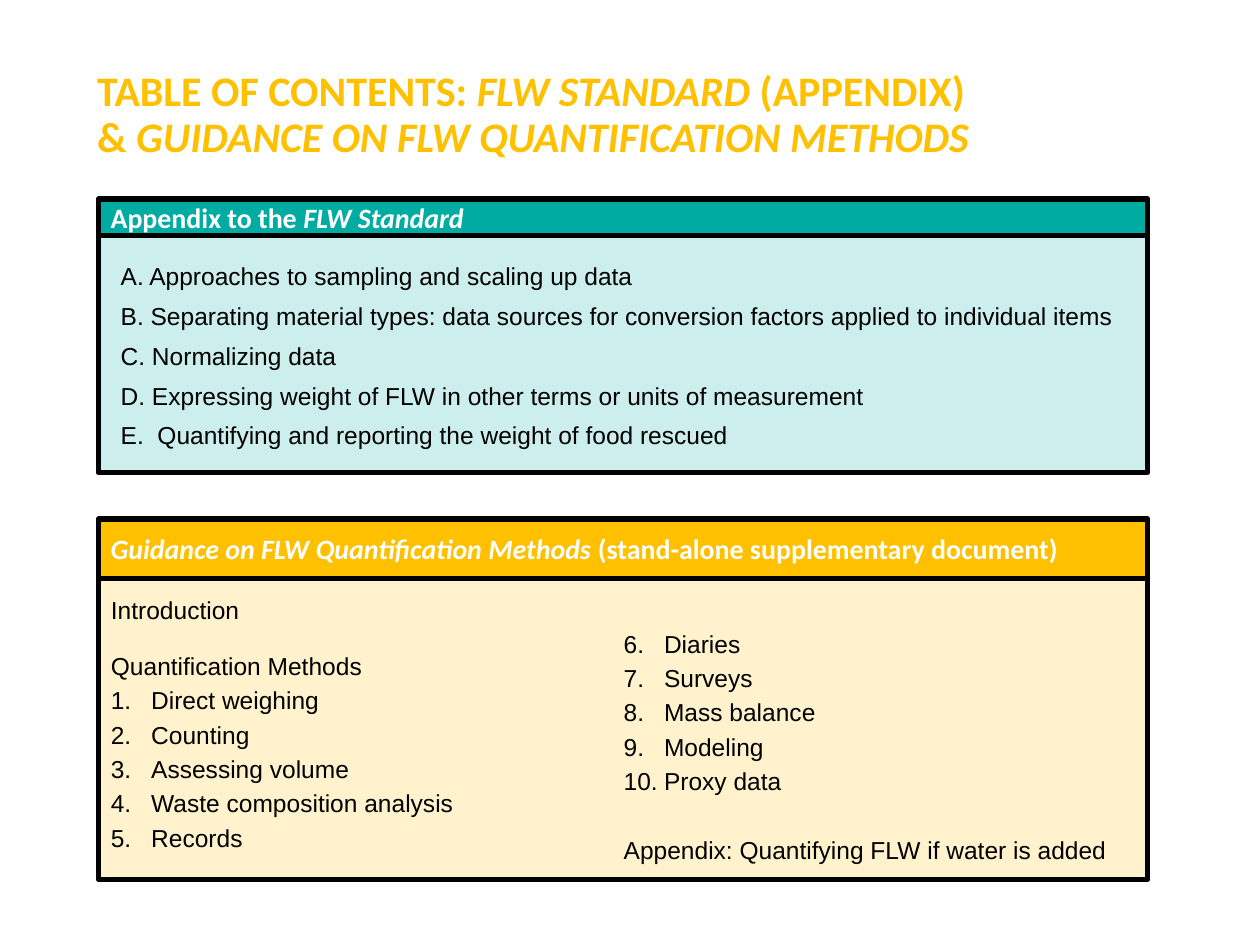
import pptx
import pptx.util
import pptx.dml.color
import pptx.enum.shapes
import pptx.enum.text
import pptx.oxml
import pptx.oxml.ns
import lxml.etree

Inches = pptx.util.Inches
Pt = pptx.util.Pt
COLORS = {"gold": "FFC000", "teal": "00ACA2", "black": "000000", "white": "FFFFFF"}
PANEL_LEFT, PANEL_WIDTH = 0.78, 8.33


def add_span(para, text, size, font, color, bold=False, italic=False):
    span = para.add_run()
    span.text = text
    span.font.size = Pt(size)
    span.font.name = font
    span.font.bold = bold
    span.font.italic = italic
    span.font.color.rgb = pptx.dml.color.RGBColor.from_string(COLORS[color])


def add_panel(top, height, color, alpha=None):
    panel = page.shapes.add_shape(
        pptx.enum.shapes.MSO_SHAPE.RECTANGLE,
        Inches(PANEL_LEFT), Inches(top), Inches(PANEL_WIDTH), Inches(height))
    panel.shadow.inherit = False
    panel.fill.solid()
    panel.fill.fore_color.rgb = pptx.dml.color.RGBColor.from_string(COLORS[color])
    panel.line.color.rgb = pptx.dml.color.RGBColor.from_string(COLORS["black"])
    panel.line.width = Pt(3)
    if alpha:
        fill_color = panel._element.spPr.find(".//" + pptx.oxml.ns.qn("a:srgbClr"))
        lxml.etree.SubElement(fill_color, pptx.oxml.ns.qn("a:alpha"), val=str(alpha * 1000))
    return panel


deck = pptx.Presentation()
deck.slide_width, deck.slide_height = Inches(10), Inches(7.5)
page = deck.slides.add_slide(deck.slide_layouts[3])

title = page.shapes.title
title.left, title.top, title.width, title.height = Inches(0.67), Inches(0.41), Inches(9.25), Inches(1.02)
title.text_frame.auto_size = pptx.enum.text.MSO_AUTO_SIZE.NONE
title.text_frame.vertical_anchor = pptx.enum.text.MSO_ANCHOR.MIDDLE
title_lines = [
    [("TABLE OF CONTENTS: ", False), ("FLW STANDARD ", True), ("(APPENDIX)", False)],
    [("& ", False), ("GUIDANCE ON FLW QUANTIFICATION METHODS", True)],
]
for index, line in enumerate(title_lines):
    para = title.text_frame.add_paragraph() if index else title.text_frame.paragraphs[0]
    para.alignment = pptx.enum.text.PP_ALIGN.LEFT
    para.line_spacing = 0.9
    for text, italic in line:
        add_span(para, text, 24, "Calibri", "gold", True, italic)

sections = [
    ("teal", 1.58, 0.29, 1.72, 2.03,
     [("Appendix to the ", False), ("FLW Standard", True)]),
    ("gold", 4.12, 0.47, 4.58, 2.4,
     [("Guidance on FLW Quantification Methods ", True),
      ("(stand-alone supplementary document)", False)]),
]
for color, header_top, header_height, body_top, body_height, heading in sections:
    add_panel(body_top, body_height, color, 20)
    header = add_panel(header_top, header_height, color)
    header.text_frame.vertical_anchor = pptx.enum.text.MSO_ANCHOR.MIDDLE
    para = header.text_frame.paragraphs[0]
    para.alignment = pptx.enum.text.PP_ALIGN.LEFT
    for text, italic in heading:
        add_span(para, text, 16, "Calibri", "white", True, italic)

appendix_list = page.shapes.add_textbox(0, 0, 0, 0)
left_column, right_column = page.placeholders[1], page.placeholders[2]
lists = [
    (appendix_list, 0.86, 2.02, 8.17, 1.62, 0, [
        ("A. Approaches to sampling and scaling up data", 0),
        ("B. Separating material types: data sources for conversion factors applied to individual items", 6),
        ("C. Normalizing data", 6),
        ("D. Expressing weight of FLW in other terms or units of measurement", 6),
        ("E.  Quantifying and reporting the weight of food rescued", 6)]),
    (left_column, 0.78, 4.67, 4.06, 2.25, 0.32, [
        ("Introduction", 0),
        ("Quantification Methods", 15.4),
        ("1.\tDirect weighing", 2.8),
        ("2.\tCounting", 2.8),
        ("3.\tAssessing volume", 2.8),
        ("4.\tWaste composition analysis", 2.8),
        ("5.\tRecords", 2.8)]),
    (right_column, 4.85, 4.94, 4.2, 1.98, 0.32, [
        ("6.\tDiaries", 0),
        ("7.\tSurveys", 2.8),
        ("8.\tMass balance", 2.8),
        ("9.\tModeling", 2.8),
        ("10.\tProxy data", 2.8),
        ("Appendix: Quantifying FLW if water is added", 22.3)]),
]
for box, left, top, width, height, hang, items in lists:
    box.left, box.top, box.width, box.height = Inches(left), Inches(top), Inches(width), Inches(height)
    page.shapes._spTree.append(box._element)
    frame = box.text_frame
    frame.word_wrap = True
    frame.auto_size = pptx.enum.text.MSO_AUTO_SIZE.NONE
    frame.vertical_anchor = pptx.enum.text.MSO_ANCHOR.TOP
    for index, (text, space) in enumerate(items):
        para = frame.add_paragraph() if index else frame.paragraphs[0]
        para.space_before = Pt(space)
        properties = para._p.get_or_add_pPr()
        properties.set("marL", str(Inches(hang)))
        properties.set("indent", str(-Inches(hang)))
        lxml.etree.SubElement(properties, pptx.oxml.ns.qn("a:buNone"))
        add_span(para, text, 14, "Arial", "black")

deck.save("out.pptx")
